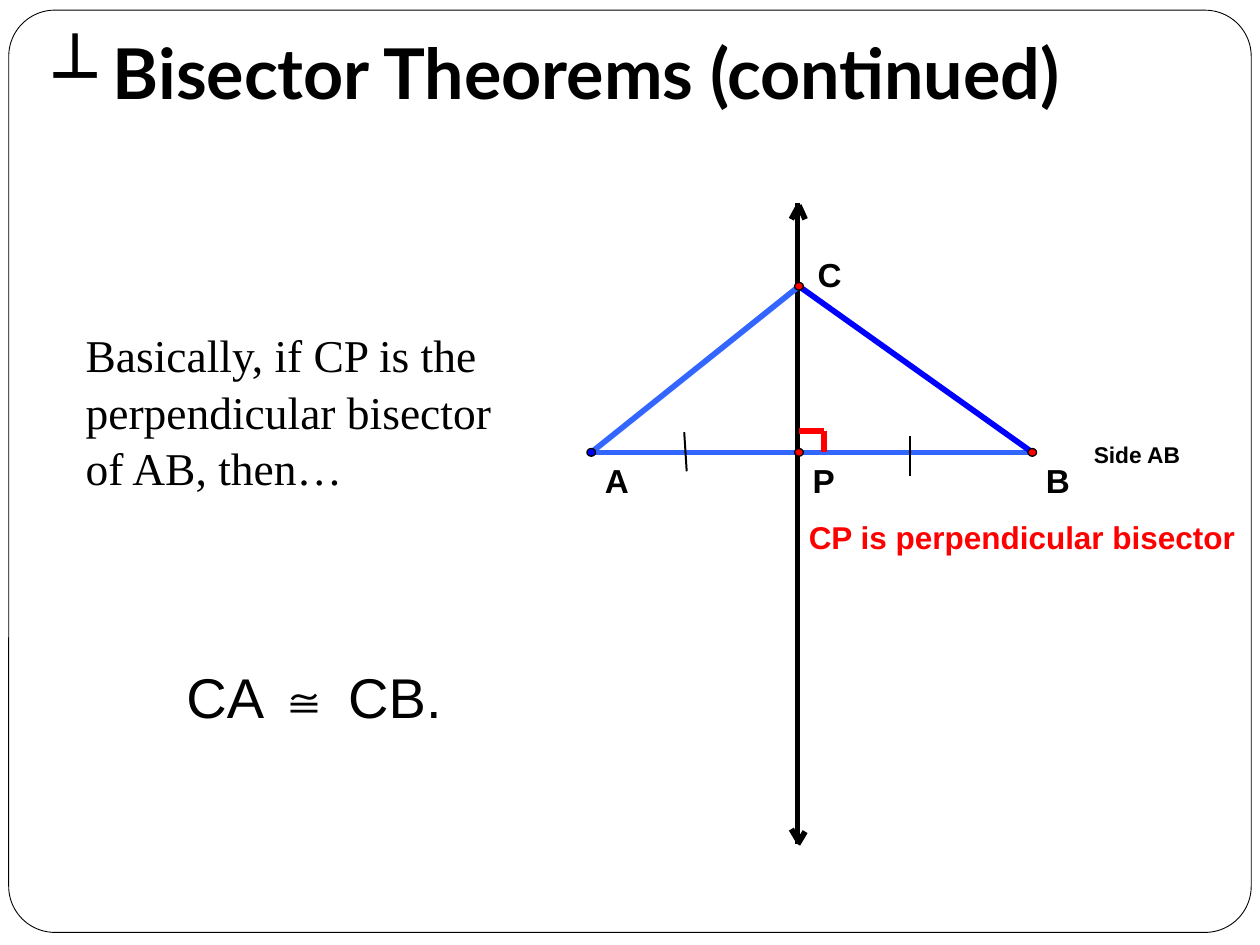
"""Build the slide on perpendicular bisector theorems."""
from typing import Any, NamedTuple

import pptx
import pptx.dml.color
import pptx.enum.shapes
import pptx.enum.text
import pptx.oxml.ns
import pptx.util

Pt = pptx.util.Pt
Color = pptx.dml.color.RGBColor
Kind = pptx.enum.shapes.MSO_SHAPE
Anchor = pptx.enum.text.MSO_ANCHOR

BLACK = Color(0x00, 0x00, 0x00)
WHITE = Color(0xFF, 0xFF, 0xFF)
RED = Color(0xFF, 0x00, 0x00)
BLUE = Color(0x00, 0x00, 0xFF)
SKY = Color(0x33, 0x66, 0xFF)

THICK = 3.25
THIN = 1.13
DOT_W, DOT_H = 5, 4.4

Point = tuple[float, float]
Box = tuple[float, float, float, float]
Format = dict[str, Any]

A: Point = (337.9, 258.5)
B: Point = (589.9, 258.5)
C: Point = (456.6, 163.6)
P: Point = (456.6, 258.5)
TOP: Point = (455.8, 115.9)
END: Point = (455.8, 482.4)
CORNER: Point = (470.9, 246.2)


class Line(NamedTuple):
    start: Point
    end: Point
    color: Color = BLACK
    width: float = THICK


class Label(NamedTuple):
    text: str
    box: Box
    font: Format
    color: Color = BLACK
    frame: Format = {}
    para: Format = {}


class Dot(NamedTuple):
    name: str
    spot: Point
    color: Color
    shift: Point = (10.1, 4.3)


def margins(left: float, top: float, right: float, bottom: float) -> Format:
    """Give the frame values for four insets."""
    sides = ("left", "top", "right", "bottom")
    return {f"margin_{side}": Pt(gap) for side, gap in zip(sides, (left, top, right, bottom))}


def arial(size: float, bold: bool = True) -> Format:
    """Give the font values for Arial text."""
    return {"name": "Arial", "size": Pt(size), "bold": bold}


TIGHT: Format = margins(0, 0, 0, 0)
LOOSE: Format = {**TIGHT, "word_wrap": False}

LINES = [
    Line(TOP, END),
    Line((460.1, 475.2), END),
    Line((452.2, 473.8), (456.5, 481)),
    Line((452.2, 125.3), (456.5, 117.4)),
    Line((460.1, 125.3), (456.5, 117.4)),
    Line(A, B, SKY),
    Line((391, 247), (392.4, 269.3), width=THIN),
    Line((519.8, 249.1), (519.8, 272.2), width=THIN),
    Line(C, A, SKY),
    Line(C, B, BLUE),
    Line((P[0], CORNER[1]), CORNER, RED),
    Line(CORNER, (CORNER[0], P[1]), RED),
]

LABELS = [
    Label("┴ Bisector Theorems (continued)", (23.8, 21.6, 660.2, 50.4),
          {"name": "Lato", "size": Pt(40), "bold": True},
          frame={**margins(7.2, 3.6, 7.2, 7.2), "vertical_anchor": Anchor.BOTTOM}),
    Label("Basically, if CP is the perpendicular bisector of AB, then…",
          (41.8, 182, 260.6, 160), {"name": "Times New Roman", "size": Pt(26)},
          para={"line_spacing": 1.04}),
    Label("Side AB", (625, 252, 49.7, 15.8), arial(13), frame=LOOSE),
    Label("CP is perpendicular bisector", (462.2, 295.9, 254.9, 21.6),
          arial(18), RED, TIGHT),
    Label("CA ≅ CB.", (99.4, 375.1, 164.9, 46.1), arial(32, False)),
]

DOTS = [
    Dot("P", P, RED, (7.8, 4.3)),
    Dot("A", A, BLUE, (7.7, 4.3)),
    Dot("B", B, RED, (7.7, 4.3)),
    Dot("C", C, RED, (10.7, -18.2)),
]


def apply(thing: Any, values: Format) -> None:
    """Set each format value on an object."""
    for key, value in values.items():
        setattr(thing, key, value)


def draw_shape(shapes: Any, kind: Kind, box: Box, fill: Color, width: float) -> Any:
    """Draw a filled shape with a black outline."""
    shape = shapes.add_shape(kind, *map(Pt, box))
    shape.shadow.inherit = False
    shape.fill.solid()
    shape.fill.fore_color.rgb = fill
    shape.line.color.rgb = BLACK
    shape.line.width = Pt(width)
    return shape


def draw_line(shapes: Any, line: Line) -> None:
    """Draw a straight line without a shadow."""
    straight = pptx.enum.shapes.MSO_CONNECTOR.STRAIGHT
    item = shapes.add_connector(straight, *map(Pt, line.start + line.end))
    item.line.color.rgb = line.color
    item.line.width = Pt(line.width)
    tag = pptx.oxml.ns.qn("a:effectLst")
    item._element.spPr.append(item._element.makeelement(tag, {}))


def draw_label(shapes: Any, label: Label) -> None:
    """Draw a text box with one run."""
    frame = shapes.add_textbox(*map(Pt, label.box)).text_frame
    apply(frame, {"word_wrap": True, **label.frame})
    para = frame.paragraphs[0]
    apply(para, label.para)
    run = para.add_run()
    run.text = label.text
    apply(run.font, label.font)
    run.font.color.rgb = label.color


def draw_dot(shapes: Any, dot: Dot) -> None:
    """Draw a named point of the figure."""
    x, y = dot.spot
    box = (x - DOT_W / 2, y - DOT_H / 2, DOT_W, DOT_H)
    draw_shape(shapes, Kind.OVAL, box, dot.color, 0)
    place = (x + dot.shift[0], y + dot.shift[1], 13.5, 23)
    draw_label(shapes, Label(dot.name, place, arial(19), frame=LOOSE))


def main() -> None:
    """Build and save the slide."""
    deck = pptx.Presentation()
    apply(deck, {"slide_width": Pt(720), "slide_height": Pt(540)})
    shapes = deck.slides.add_slide(deck.slide_layouts[6]).shapes
    border = draw_shape(shapes, Kind.ROUNDED_RECTANGLE, (5, 5.8, 710, 527), WHITE, 0.5)
    border.adjustments[0] = 0.05
    for line in LINES:
        draw_line(shapes, line)
    for label in LABELS:
        draw_label(shapes, label)
    for dot in DOTS:
        draw_dot(shapes, dot)
    deck.save("out.pptx")


if __name__ == "__main__":
    main()
